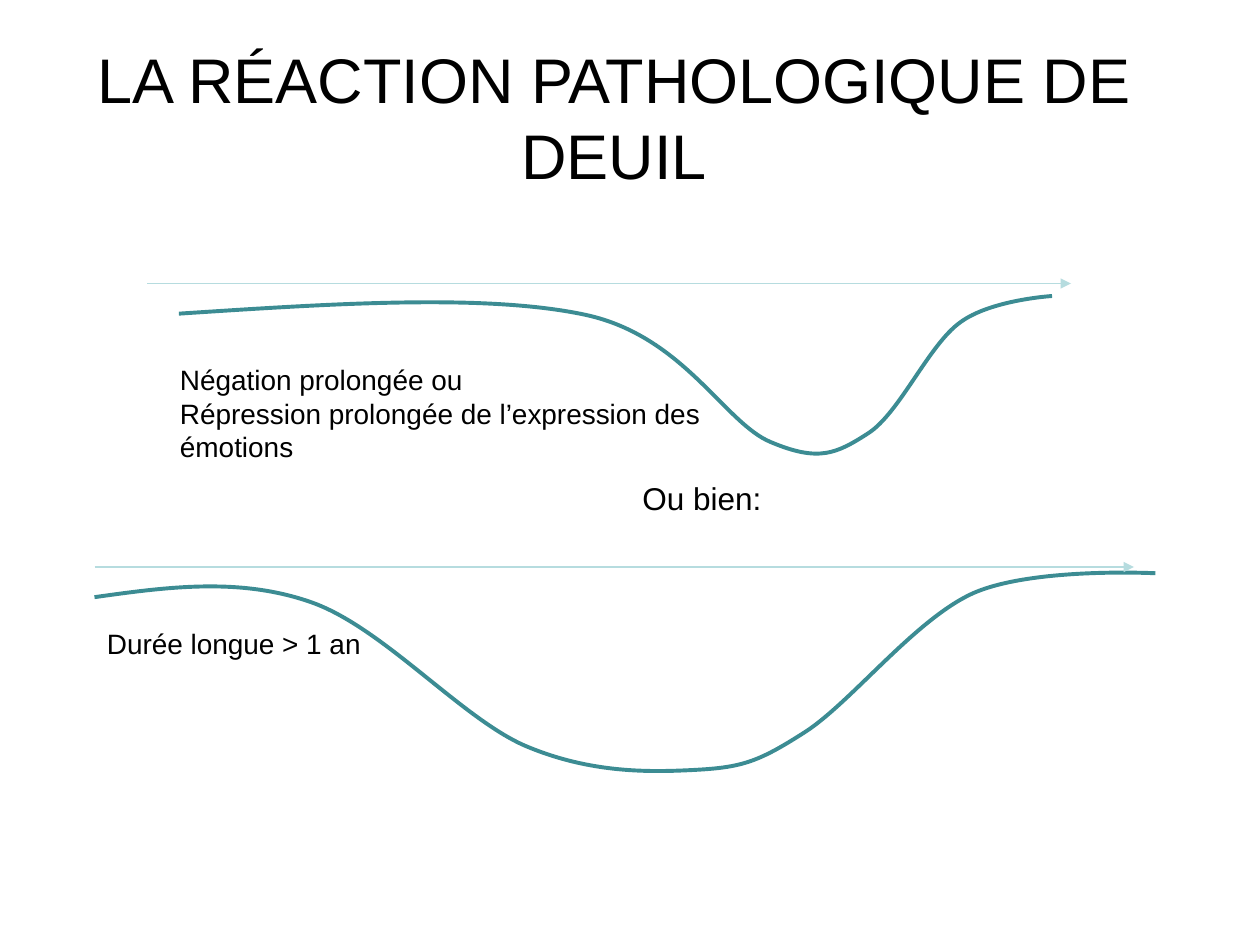
from dataclasses import dataclass

from lxml import etree
from pptx import Presentation
from pptx.dml.color import RGBColor
from pptx.enum.shapes import MSO_CONNECTOR
from pptx.enum.text import MSO_ANCHOR, PP_ALIGN
from pptx.oxml.ns import qn
from pptx.util import Inches, Pt

STRAIGHT = MSO_CONNECTOR.STRAIGHT
TOP, MIDDLE = MSO_ANCHOR.TOP, MSO_ANCHOR.MIDDLE
LEFT, CENTER = PP_ALIGN.LEFT, PP_ALIGN.CENTER


@dataclass(frozen=True)
class Theme:
    font: str = "Arial"
    ink: RGBColor = RGBColor(0x00, 0x00, 0x00)
    curve: RGBColor = RGBColor(0x3C, 0x8C, 0x93)
    axis: RGBColor = RGBColor(0xB6, 0xDC, 0xDF)
    title_size: int = 36
    link_size: int = 18
    note_size: int = 16
    curve_width: float = 2.25
    axis_width: float = 0.75


class SlideBuilder:
    def __init__(self, slide, theme):
        self.shapes = slide.shapes
        self.theme = theme

    def text(self, box, lines, size, align=LEFT, anchor=TOP, wrap=True):
        frame = self.shapes.add_textbox(*map(Inches, box)).text_frame
        frame.word_wrap = wrap
        frame.vertical_anchor = anchor
        frame.text = "\n".join(lines)
        for paragraph in frame.paragraphs:
            paragraph.alignment = align
            paragraph.font.name = self.theme.font
            paragraph.font.size = Pt(size)
            paragraph.font.color.rgb = self.theme.ink

    def time_axis(self, start, end, y):
        axis = self.shapes.add_connector(
            STRAIGHT, Inches(start), Inches(y), Inches(end), Inches(y))
        axis.line.color.rgb = self.theme.axis
        axis.line.width = Pt(self.theme.axis_width)
        properties = axis._element.spPr
        etree.SubElement(properties.find(qn("a:ln")), qn("a:tailEnd"), type="triangle")
        etree.SubElement(properties, qn("a:effectLst"))

    def mood_curve(self, start, *controls):
        """Draw a Bézier curve; each three control points make one segment."""
        builder = self.shapes.build_freeform(*map(Inches, start))
        builder.add_line_segments(
            [(Inches(x), Inches(y)) for x, y in controls], close=False)
        curve = builder.convert_to_shape()
        curve.shadow.inherit = False
        curve.fill.background()
        curve.line.color.rgb = self.theme.curve
        curve.line.width = Pt(self.theme.curve_width)

        steps = list(curve._element.iter(qn("a:lnTo")))
        for first, second, last in zip(steps[::3], steps[1::3], steps[2::3]):
            first.tag = qn("a:cubicBezTo")
            for step in (second, last):
                first.append(step[0])
                step.getparent().remove(step)


def main():
    presentation = Presentation()
    presentation.slide_width, presentation.slide_height = Inches(10), Inches(7.5)
    theme = Theme()
    slide = SlideBuilder(
        presentation.slides.add_slide(presentation.slide_layouts[6]), theme)

    slide.text((0, 0.3, 9.75, 1.25), ["LA RÉACTION PATHOLOGIQUE DE DEUIL"],
               theme.title_size, align=CENTER, anchor=MIDDLE)

    # Prolonged denial: a late, short dip
    slide.mood_curve(
        (1.42, 2.49),
        (2.64, 2.41), (3.86, 2.33), (4.65, 2.5),
        (5.43, 2.67), (5.75, 3.36), (6.12, 3.51),
        (6.5, 3.67), (6.64, 3.6), (6.89, 3.44),
        (7.14, 3.28), (7.37, 2.74), (7.62, 2.56),
        (7.86, 2.38), (8.35, 2.35), (8.35, 2.35))
    slide.time_axis(1.17, 8.5, 2.25)

    # Long duration: an early, wide dip
    slide.mood_curve(
        (0.75, 4.74),
        (1.32, 4.66), (1.9, 4.58), (2.47, 4.78),
        (3.04, 4.98), (3.66, 5.7), (4.17, 5.92),
        (4.69, 6.14), (5.16, 6.13), (5.53, 6.11),
        (5.9, 6.09), (6.03, 6.04), (6.39, 5.81),
        (6.76, 5.57), (7.26, 4.92), (7.72, 4.71),
        (8.19, 4.5), (9.17, 4.55), (9.17, 4.55))
    slide.time_axis(0.75, 9, 4.5)

    slide.text((0.75, 4.92, 2.22, 0.37), ["Durée longue > 1 an"],
               theme.note_size, wrap=False)
    slide.text((1.33, 2.83, 4.42, 0.9),
               ["Négation prolongée ou",
                "Répression prolongée de l’expression des émotions"],
               theme.note_size)
    slide.text((5, 3.75, 1.15, 0.4), ["Ou bien:"], theme.link_size, wrap=False)

    presentation.save("out.pptx")


if __name__ == "__main__":
    main()
